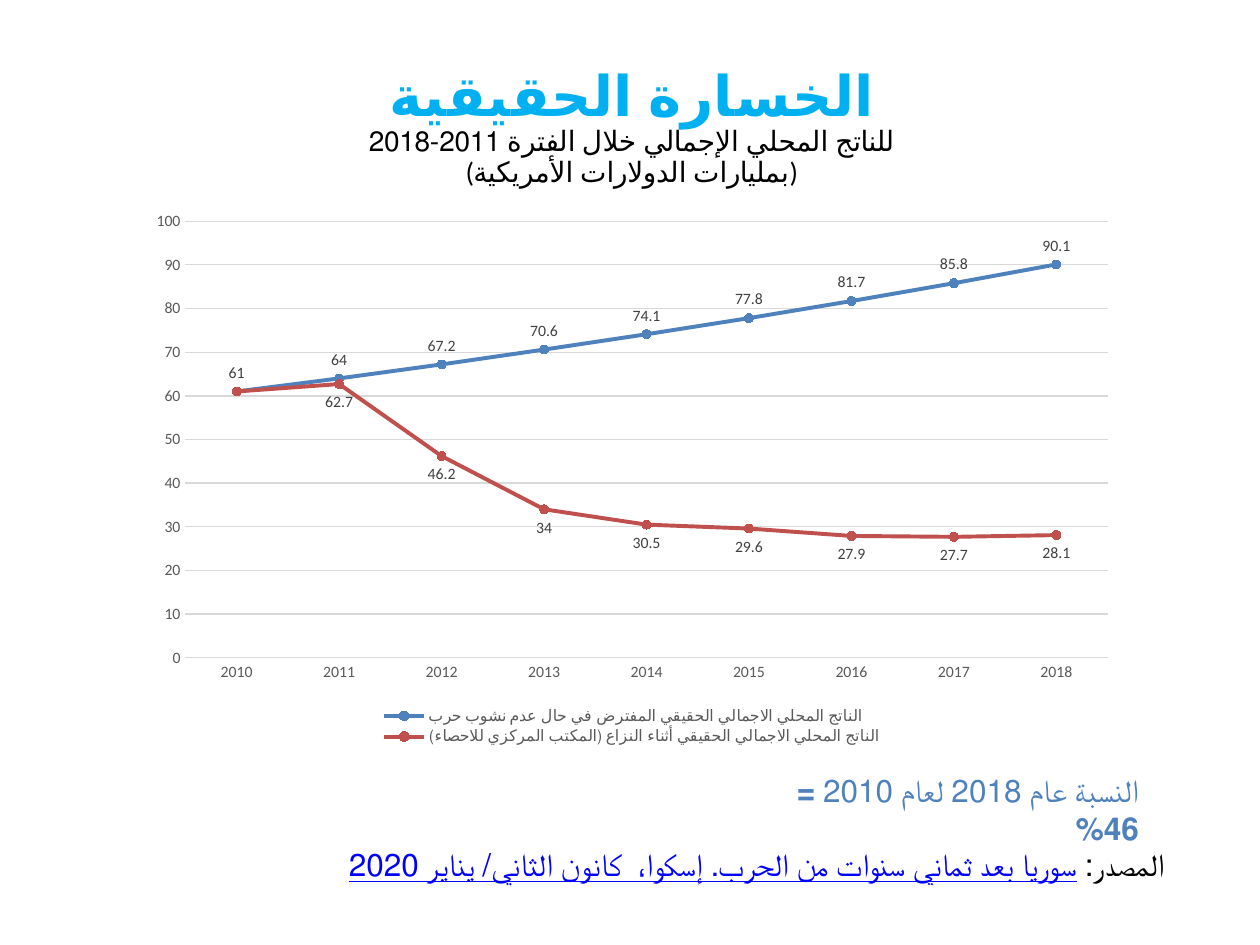
import pptx
import pptx.chart.data
import pptx.dml.color
import pptx.enum.chart
import pptx.enum.text
import pptx.oxml
import pptx.oxml.ns
import pptx.util
from pptx.util import Cm

FONT = "Calibri"
BLUE, RED, GRID, GREY = "4F81BD", "C0504D", "D9D9D9", "595959"
YEARS = [str(year) for year in range(2010, 2019)]
GDP_WITHOUT_WAR = (61, 64, 67.2, 70.6, 74.1, 77.8, 81.7, 85.8, 90.1)
GDP_IN_CONFLICT = (61, 62.7, 46.2, 34, 30.5, 29.6, 27.9, 27.7, 28.1)
HEADING = [
    ("الخسارة الحقيقية", 32, "00B0F0", True),
    ("للناتج المحلي الإجمالي خلال الفترة 2011-2018", 16, "000000", False),
    ("(بمليارات الدولارات الأمريكية)", 16, "000000", False),
]


def color(value):
    return pptx.dml.color.RGBColor.from_string(value)


def style_font(font, size, value, bold=False, underline=None):
    font.name = FONT
    font.size = pptx.util.Pt(size)
    font.color.rgb = color(value)
    font.bold = bold
    font.underline = underline


def style_line(line, value, width):
    line.color.rgb = color(value)
    line.width = pptx.util.Pt(width)


def set_right_to_left(paragraph):
    paragraph._p.get_or_add_pPr().set("rtl", "1")


def add_heading(chart):
    frame = chart.chart_title.text_frame
    for index, (words, size, value, bold) in enumerate(HEADING):
        paragraph = frame.add_paragraph() if index else frame.paragraphs[0]
        set_right_to_left(paragraph)
        run = paragraph.add_run()
        run.text = words
        style_font(run.font, size, value, bold)
    chart.chart_title.include_in_layout = False


def style_axes(chart):
    marks = pptx.enum.chart.XL_TICK_MARK
    for axis in (chart.category_axis, chart.value_axis):
        axis.major_tick_mark = axis.minor_tick_mark = marks.NONE
        style_font(axis.tick_labels.font, 9, GREY)
    style_line(chart.category_axis.format.line, GRID, 0.75)
    values = chart.value_axis
    values.minimum_scale, values.maximum_scale, values.major_unit = 0, 100, 10
    values.format.line.fill.background()
    style_line(values.major_gridlines.format.line, GRID, 0.75)


def style_series(series, value, label_position):
    series.smooth = False
    style_line(series.format.line, value, 2.25)
    marker = series.marker
    marker.style = pptx.enum.chart.XL_MARKER_STYLE.CIRCLE
    marker.size = 5
    marker.format.fill.solid()
    marker.format.fill.fore_color.rgb = color(value)
    style_line(marker.format.line, value, 0.75)
    labels = series.data_labels
    labels.show_value = True
    labels.position = label_position
    style_font(labels.font, 9, "404040")


def hide_first_label(series):
    label = pptx.oxml.parse_xml(
        f'<c:dLbl {pptx.oxml.ns.nsdecls("c")}><c:idx val="0"/><c:delete val="1"/></c:dLbl>')
    series.data_labels._element.insert(0, label)


def place_plot(chart, **fractions):
    parts = "".join(f'<c:{name} val="{share}"/>' for name, share in fractions.items())
    layout = pptx.oxml.parse_xml(
        f'<c:layout {pptx.oxml.ns.nsdecls("c")}><c:manualLayout>'
        '<c:layoutTarget val="inner"/><c:xMode val="edge"/><c:yMode val="edge"/>'
        f'{parts}</c:manualLayout></c:layout>')
    plot_area = chart._chartSpace.chart.plotArea
    for automatic in plot_area.findall(pptx.oxml.ns.qn("c:layout")):
        plot_area.remove(automatic)
    plot_area.insert(0, layout)


def add_gdp_chart(slide):
    data = pptx.chart.data.CategoryChartData()
    data.categories = YEARS
    data.add_series("الناتج المحلي الاجمالي الحقيقي المفترض في حال عدم نشوب حرب", GDP_WITHOUT_WAR)
    data.add_series("الناتج المحلي الاجمالي الحقيقي أثناء النزاع (المكتب المركزي للاحصاء)", GDP_IN_CONFLICT)
    chart = slide.shapes.add_chart(
        pptx.enum.chart.XL_CHART_TYPE.LINE_MARKERS,
        Cm(2.74), Cm(0.91), Cm(19.99), Cm(14.2), data).chart
    style_font(chart.font, 10, "000000")
    add_heading(chart)
    style_axes(chart)
    positions = pptx.enum.chart.XL_LABEL_POSITION
    without_war, in_conflict = chart.plots[0].series
    style_series(without_war, BLUE, positions.ABOVE)
    style_series(in_conflict, RED, positions.BELOW)
    hide_first_label(in_conflict)
    chart.has_legend = True
    chart.legend.position = pptx.enum.chart.XL_LEGEND_POSITION.BOTTOM
    chart.legend.include_in_layout = False
    style_font(chart.legend.font, 9, GREY)
    place_plot(chart, x=0.05, y=0.25, w=0.93, h=0.62)


def add_note(slide, left, top, width, height, runs):
    frame = slide.shapes.add_textbox(Cm(left), Cm(top), Cm(width), Cm(height)).text_frame
    frame.word_wrap = False
    frame.auto_size = pptx.enum.text.MSO_AUTO_SIZE.SHAPE_TO_FIT_TEXT
    paragraph = frame.paragraphs[0]
    paragraph.alignment = pptx.enum.text.PP_ALIGN.RIGHT
    set_right_to_left(paragraph)
    for words, value, bold, underline in runs:
        run = paragraph.add_run()
        run.text = words
        style_font(run.font, 18, value, bold, underline)


def main():
    deck = pptx.Presentation()
    deck.slide_width, deck.slide_height = Cm(25.4), Cm(19.05)
    slide = deck.slides.add_slide(deck.slide_layouts[6])
    add_gdp_chart(slide)
    add_note(slide, 14.5, 15.42, 8.71, 1.02, [
        ("النسبة عام 2018 لعام 2010 ", BLUE, False, None),
        ("= 46%", BLUE, True, None),
    ])
    add_note(slide, 6.71, 16.92, 17.02, 1.8, [
        ("المصدر: ", "000000", False, None),
        ("سوريا بعد ثماني سنوات من الحرب. إسكوا،  كانون الثاني/ يناير 2020", "0000FF", False, True),
    ])
    deck.save("out.pptx")


if __name__ == "__main__":
    main()
